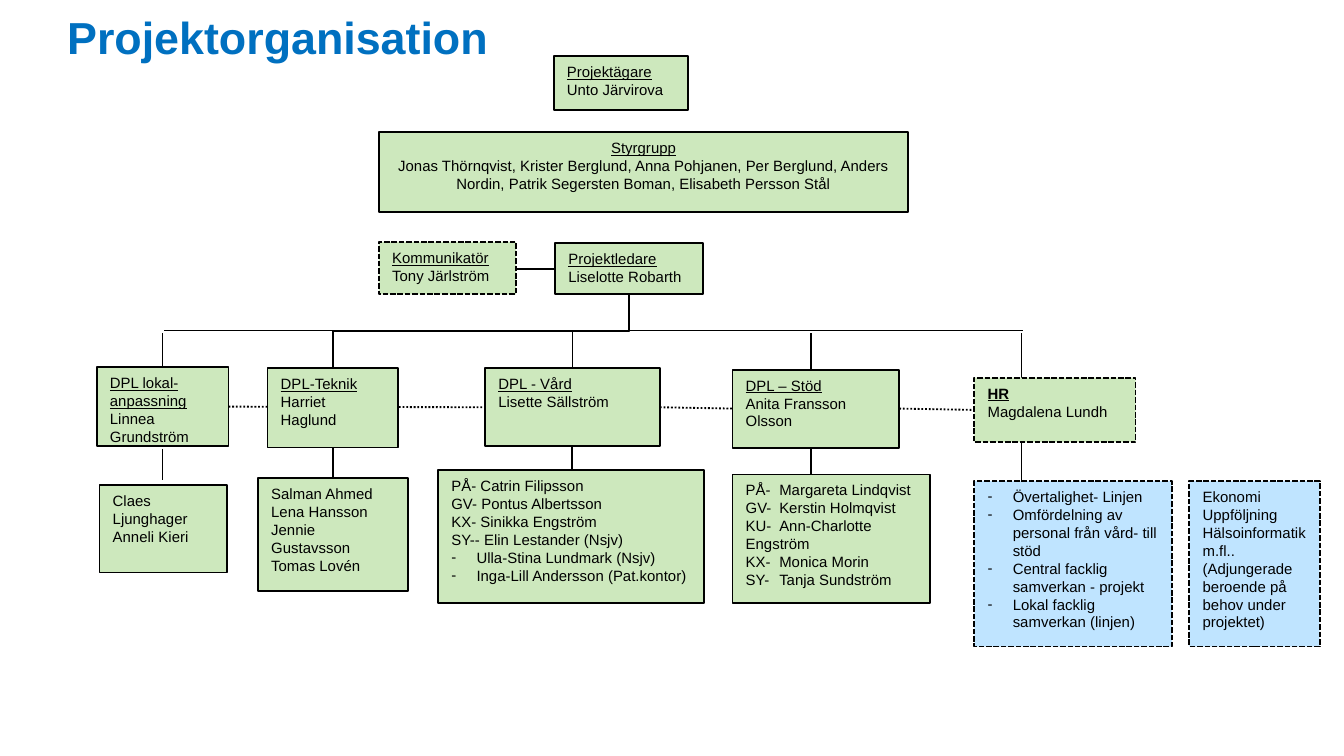
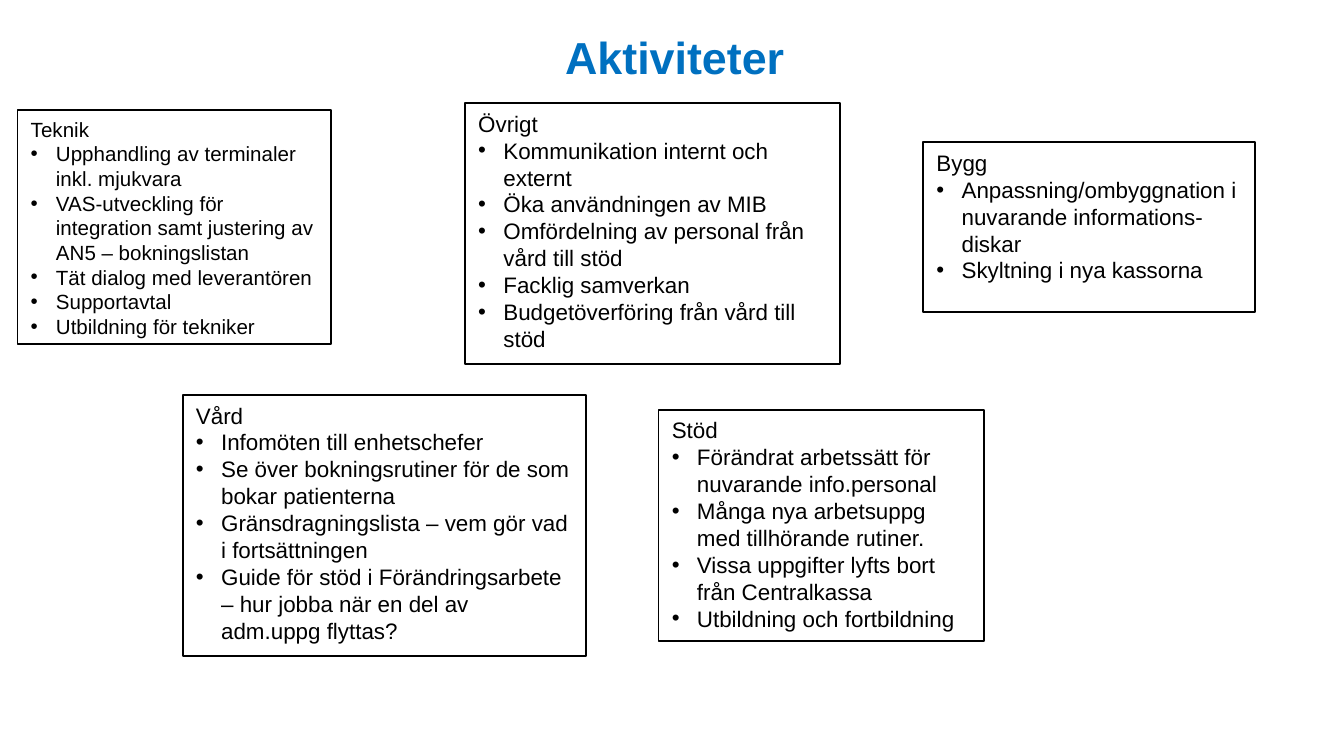
from dataclasses import dataclass

from lxml.etree import SubElement
from pptx import Presentation
from pptx.dml.color import RGBColor
from pptx.enum.dml import MSO_LINE
from pptx.enum.shapes import MSO_CONNECTOR, MSO_SHAPE
from pptx.enum.text import MSO_ANCHOR, MSO_AUTO_SIZE, PP_ALIGN
from pptx.oxml.ns import qn
from pptx.util import Pt


@dataclass(frozen=True)
class Theme:
    font: str = "Arial"
    title: str = "0070C0"
    ink: str = "000000"
    green: str = "CDE8BD"
    blue: str = "BFE4FF"
    white: str = "FFFFFF"
    title_size: int = 24
    chart_size: int = 8
    line_width: int = 1
    indent: float = 13.5
    code_tab: int = 18


T = Theme()

# Content: places are left, top, width, height in points
ORG_TITLE = ("Projektorganisation", (28.8, -29.5, 242.6, 67))
ORG_BOXES = {
    "owner": dict(at=(296.6, 30.2, 72, 28.8), head="Projektägare", lines=["Unto Järvirova"]),
    "leader": dict(at=(297.4, 130.3, 79.2, 27.4), head="Projektledare", lines=["Liselotte Robarth"]),
    "steering": dict(
        at=(203, 70.6, 283.7, 43.2), head="Styrgrupp", align=PP_ALIGN.CENTER,
        lines=["Jonas Thörnqvist, Krister Berglund, Anna Pohjanen, Per Berglund, Anders Nordin, "
               "Patrik Segersten Boman, Elisabeth Persson Stål"]),
    "communicator": dict(at=(203, 129.6, 73.4, 28.1), head="Kommunikatör",
                         lines=["Tony Järlström"], dashed=True),
    "local": dict(at=(51.8, 196.6, 70.6, 42.5), head=["DPL lokal-", "anpassning"],
                  lines=["Linnea Grundström"]),
    "tech": dict(at=(143.3, 197.3, 70, 42.5), head="DPL-Teknik", lines=["Harriet Haglund"]),
    "care": dict(at=(259.9, 197.3, 93.6, 41.8), head="DPL - Vård", lines=["Lisette Sällström"]),
    "support": dict(at=(392.4, 198, 89.3, 41.8), head="DPL – Stöd", lines=["Anita Fransson Olsson"]),
    "hr": dict(at=(522, 202.3, 86.4, 34.6), head="HR", bold_head=True,
               lines=["Magdalena Lundh"], dashed=True),
    "local_team": dict(at=(53.3, 259.9, 68.4, 46.8), lines=["Claes Ljunghager", "Anneli Kieri"]),
    "tech_team": dict(at=(138.2, 256.3, 80.6, 60.5),
                      lines=["Salman Ahmed", "Lena Hansson", "Jennie Gustavsson", "Tomas Lovén"]),
    "care_team": dict(
        at=(234.7, 252, 142.6, 71.3),
        lines=["PÅ- Catrin Filipsson", "GV- Pontus Albertsson", "KX- Sinikka Engström",
               "SY-- Elin Lestander (Nsjv)"],
        bullets=["Ulla-Stina Lundmark (Nsjv)", "Inga-Lill Andersson (Pat.kontor)"]),
    "support_team": dict(
        at=(392.4, 254.2, 105.8, 69.1), tab=T.code_tab,
        lines=["PÅ-\tMargareta Lindqvist", "GV-\tKerstin Holmqvist", "KU-\tAnn-Charlotte Engström",
               "KX-\tMonica Morin", "SY-\tTanja Sundström"]),
    "hr_tasks": dict(
        at=(522, 257.8, 105.8, 88.6), fill=T.blue, dashed=True,
        bullets=["Övertalighet- Linjen", "Omfördelning av personal från vård- till stöd",
                 "Central facklig samverkan - projekt", "Lokal facklig samverkan (linjen)"]),
    "adjunct": dict(
        at=(637.2, 257.8, 69.8, 88.6), fill=T.blue, dashed=True,
        lines=["Ekonomi", "Uppföljning", "Hälsoinformatik m.fl..", "(Adjungerade beroende på",
               "behov under projektet)"]),
}
BUS = (87.8, 547.9, 177.1)  # left, right, height of the shared line
STEMS = [  # x, top, bottom
    (87.1, 178.6, 196.6), (87.1, 240.5, 257), (178.6, 239, 256.3),
    (306.4, 239, 252), (434.5, 178.6, 254.2), (547.2, 178.6, 257.8),
]
ELBOWS = ["care", "tech"]
DOTTED_LINKS = [("local", "care"), ("care", "support"), ("support", "hr")]

ACTIVITY_TITLE = ("Aktiviteter", (126, 16.6, 470.9, 31.7))
ACTIVITIES = [
    dict(at=(9.4, 59, 167.8, 125.3), size=11, lines=["Teknik"], bullets=[
        "Upphandling av terminaler inkl. mjukvara",
        "VAS-utveckling för integration samt justering av AN5 – bokningslistan",
        "Tät dialog med leverantören", "Supportavtal", "Utbildning för tekniker"]),
    dict(at=(97.9, 211.7, 216, 139.7), lines=["Vård"], bullets=[
        "Infomöten till enhetschefer", "Se över bokningsrutiner för de som bokar patienterna",
        "Gränsdragningslista – vem gör vad i fortsättningen",
        "Guide för stöd i Förändringsarbete – hur jobba när en del av adm.uppg flyttas?"]),
    dict(at=(352.8, 219.6, 174.2, 123.8), lines=["Stöd"], bullets=[
        "Förändrat arbetssätt för nuvarande info.personal",
        "Många nya arbetsuppg med tillhörande rutiner.",
        "Vissa uppgifter lyfts bort från Centralkassa", "Utbildning och fortbildning"]),
    dict(at=(494.6, 76.3, 177.8, 90.7), lines=["Bygg"], bullets=[
        "Anpassning/ombyggnation i nuvarande informations-diskar", "Skyltning i nya kassorna"]),
    dict(at=(249.1, 55.4, 200.9, 139.7), lines=["Övrigt"], bullets=[
        "Kommunikation internt och externt", "Öka användningen av MIB",
        "Omfördelning av personal från vård till stöd", "Facklig samverkan",
        "Budgetöverföring från vård till stöd"]),
]


# Text
def write(tf, text, size=T.chart_size, color=T.ink, bold=False, underline=False,
          align=PP_ALIGN.LEFT, bullet=None, tab=None):
    p = tf.paragraphs[0] if not tf.text else tf.add_paragraph()
    pPr = p._p.get_or_add_pPr()
    if bullet:
        indent = Pt(T.indent)
        pPr.set("marL", str(indent))
        pPr.set("indent", str(-indent))
        SubElement(pPr, qn("a:buFont"), typeface=T.font)
        SubElement(pPr, qn("a:buChar"), char=bullet)
    if tab:
        tabs = SubElement(pPr, qn("a:tabLst"))
        SubElement(tabs, qn("a:tab"), pos=str(Pt(tab)), algn="l")
    p.alignment = align
    r = p.add_run()
    r.text = text
    f = r.font
    f.name, f.size, f.bold, f.underline = T.font, Pt(size), bold, underline
    f.color.rgb = RGBColor.from_string(color)


def add_slide(prs, title, at, align):
    s = prs.slides.add_slide(prs.slide_layouts[5])
    sp = s.shapes.title
    sp.left, sp.top, sp.width, sp.height = map(Pt, at)
    tf = sp.text_frame
    tf.auto_size = MSO_AUTO_SIZE.NONE
    tf.vertical_anchor = MSO_ANCHOR.BOTTOM
    write(tf, title, size=T.title_size, color=T.title, bold=True, align=align)
    return s


# Boxes and lines
def set_line(line, dash=None):
    line.color.rgb = RGBColor.from_string(T.ink)
    line.width = Pt(T.line_width)
    if dash:
        line.dash_style = dash


def add_box(s, at, head=(), lines=(), bullets=(), fill=T.green, dashed=False, bold_head=False,
            bullet="-", **fmt):
    sp = s.shapes.add_shape(MSO_SHAPE.RECTANGLE, *map(Pt, at))
    sp.shadow.inherit = False
    sp.fill.solid()
    sp.fill.fore_color.rgb = RGBColor.from_string(fill)
    set_line(sp.line, MSO_LINE.SQUARE_DOT if dashed else None)
    if dashed:
        sp.line._get_or_add_ln().find(qn("a:prstDash")).set("val", "sysDash")
    tf = sp.text_frame
    tf.word_wrap = True
    tf.vertical_anchor = MSO_ANCHOR.TOP
    for text in [head] if isinstance(head, str) else head:
        write(tf, text, underline=True, bold=bold_head, **fmt)
    for text in lines:
        write(tf, text, **fmt)
    for text in bullets:
        write(tf, text, bullet=bullet, **fmt)


def add_line(s, x1, y1, x2, y2, dash=None, kind=MSO_CONNECTOR.STRAIGHT):
    c = s.shapes.add_connector(kind, *map(Pt, (x1, y1, x2, y2)))
    SubElement(c._element.spPr, qn("a:effectLst"))
    set_line(c.line, dash)
    return c


def add_drop_elbow(s, x1, y1, x2, y2):
    """Elbow that leaves downwards and ends lower to the left: a quarter turn."""
    cx, cy, dx, dy = (x1 + x2) / 2, (y1 + y2) / 2, (x1 - x2) / 2, (y2 - y1) / 2
    c = add_line(s, cx - dy, cy - dx, cx + dy, cy + dx, kind=MSO_CONNECTOR.ELBOW)
    c._element.spPr.find(qn("a:xfrm")).set("rot", "5400000")


def middle(name):
    x, y, w, h = ORG_BOXES[name]["at"]
    return x + w / 2, y + h / 2


def right_edge(name):
    x, _, w, _ = ORG_BOXES[name]["at"]
    return x + w


# Slides
def organisation_slide(prs):
    s = add_slide(prs, *ORG_TITLE, PP_ALIGN.LEFT)
    for a, b in DOTTED_LINKS:
        add_line(s, right_edge(a), middle(a)[1], ORG_BOXES[b]["at"][0], middle(b)[1],
                 dash=MSO_LINE.ROUND_DOT)
    for x, top, bottom in STEMS:
        add_line(s, x, top, x, bottom)
    left, right, y = BUS
    add_line(s, left, y, right, y)
    link_y = middle("leader")[1]
    add_line(s, right_edge("communicator"), link_y, ORG_BOXES["leader"]["at"][0], link_y)
    _, top, _, height = ORG_BOXES["leader"]["at"]
    for name in ELBOWS:
        add_drop_elbow(s, middle("leader")[0], top + height, middle(name)[0],
                       ORG_BOXES[name]["at"][1])
    for box in ORG_BOXES.values():
        add_box(s, **box)


def activity_slide(prs):
    s = add_slide(prs, *ACTIVITY_TITLE, PP_ALIGN.CENTER)
    for box in ACTIVITIES:
        add_box(s, **{"size": 12, "fill": T.white, "bullet": "•", **box})


def main():
    prs = Presentation()
    prs.slide_width, prs.slide_height = Pt(720), Pt(405)
    organisation_slide(prs)
    activity_slide(prs)
    prs.save("out.pptx")


if __name__ == "__main__":
    main()
